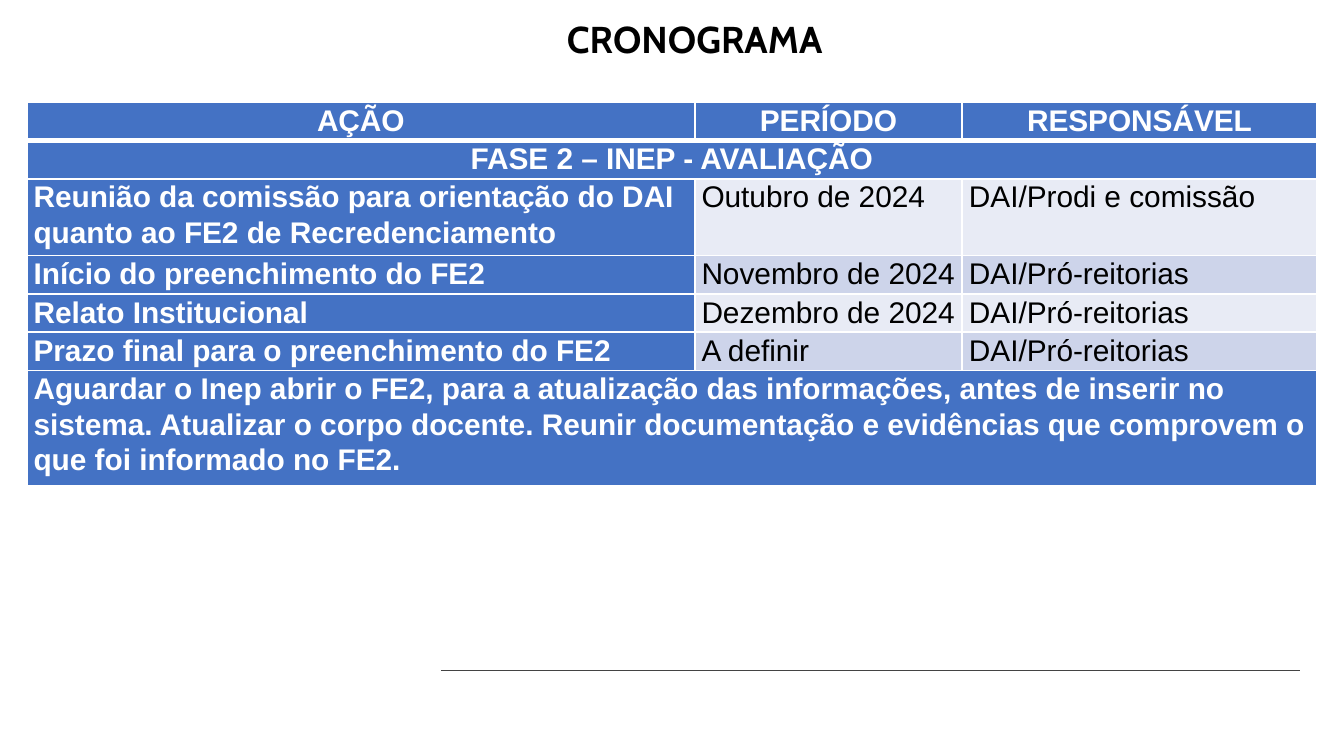
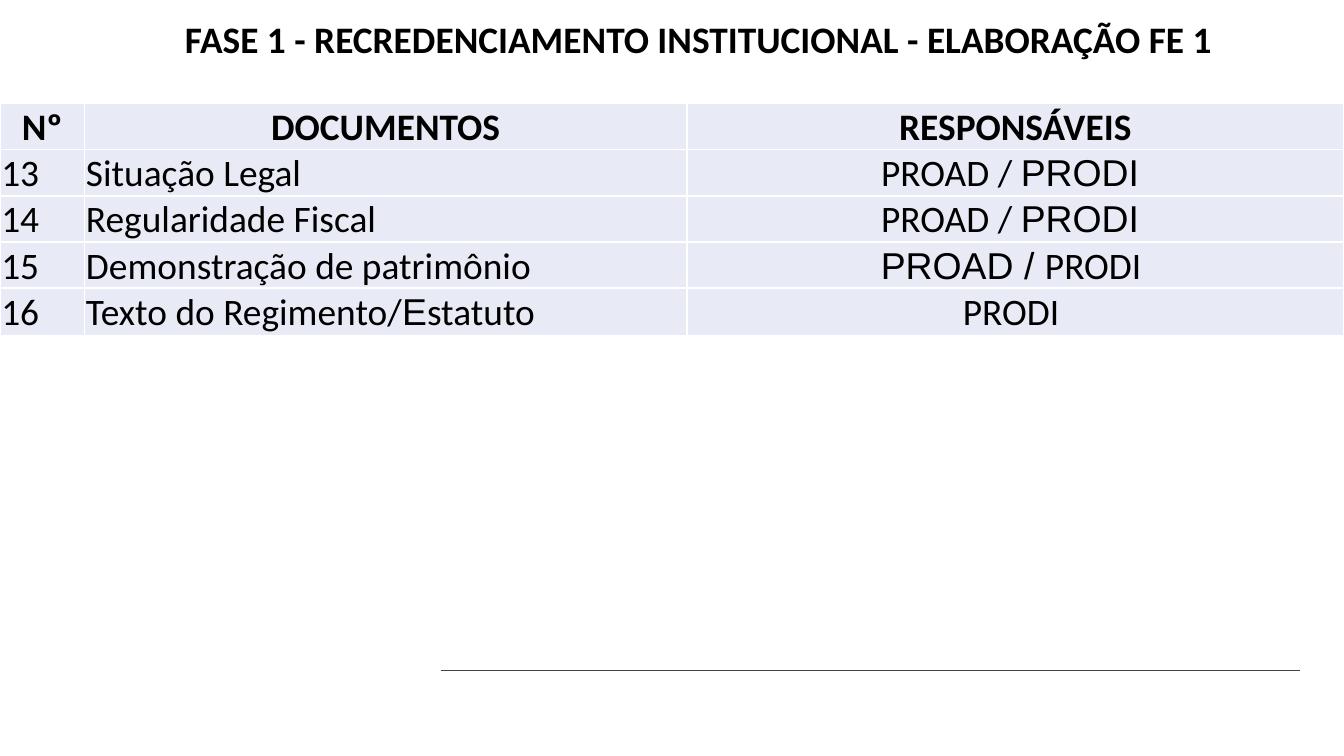
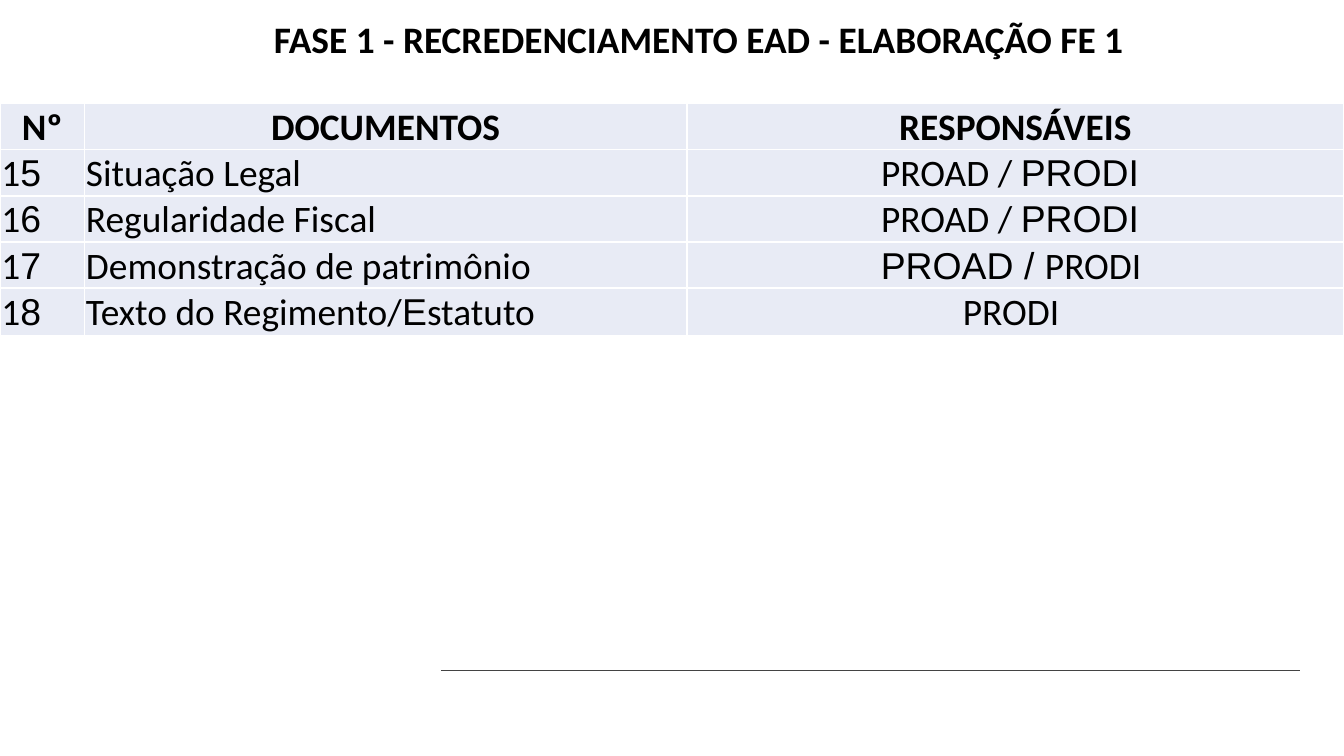
"""Build three slides with the schedule and document tables of an accreditation process."""
from dataclasses import dataclass

from lxml import etree
from pptx import Presentation
from pptx.dml.color import RGBColor
from pptx.enum.shapes import MSO_CONNECTOR
from pptx.enum.text import MSO_ANCHOR, PP_ALIGN
from pptx.oxml.ns import qn
from pptx.util import Inches, Pt

LEFT, CENTER, JUSTIFY = PP_ALIGN.LEFT, PP_ALIGN.CENTER, PP_ALIGN.JUSTIFY
TOP, MIDDLE = MSO_ANCHOR.TOP, MSO_ANCHOR.MIDDLE
STRAIGHT = MSO_CONNECTOR.STRAIGHT


@dataclass(frozen=True)
class Theme:
    black: str = "000000"
    white: str = "FFFFFF"
    rule: str = "434343"
    blue: str = "4472C4"
    bands: tuple = ("E8EBF5", "CDD4EA")
    title_size: int = 20
    schedule_size: int = 16
    document_size: int = 20
    title_font: str = "Cabin"
    sans: str = "Arial"
    body: str = "Calibri"


THEME = Theme()
WIDTH = 10
HEIGHT = WIDTH * 9 / 16
FRAME = 3.28

SCHEDULE = [
    ("AÇÃO", "PERÍODO", "RESPONSÁVEL"),
    ("FASE 2 – INEP - AVALIAÇÃO",),
    ("Reunião da comissão para orientação do DAI quanto ao FE2 de Recredenciamento",
     "Outubro de 2024", "DAI/Prodi e comissão"),
    ("Início do preenchimento do FE2", "Novembro de 2024", "DAI/Pró-reitorias"),
    ("Relato Institucional", "Dezembro de 2024", "DAI/Pró-reitorias"),
    ("Prazo final para o preenchimento do FE2", "A definir", "DAI/Pró-reitorias"),
    ("Aguardar o Inep abrir o FE2, para a atualização das informações, antes de inserir "
     "no sistema. Atualizar o corpo docente. Reunir documentação e evidências que "
     "comprovem o que foi informado no FE2.",),
]
SCHEDULE_GRID = dict(at=(0.2, 0.76), cols=(4.97, 1.99, 2.64), rows=(0.16,) * 6 + (0.32,),
                     margins=(0.05, 0, 0.05, 0), anchor=TOP)

SWITCH = "|"
DOCUMENT_HEAD = ("Nº", "DOCUMENTOS", "RESPONSÁVEIS")
DOCUMENTS = [
    ("Situação Legal", "PROAD / |PRODI "),
    ("Regularidade Fiscal", "PROAD / |PRODI "),
    ("Demonstração de patrimônio", "|PROAD / |PRODI "),
    ("Texto do Regimento/|E|statuto", "PRODI "),
]
DOCUMENT_SLIDES = [
    ("FASE 1 - RECREDENCIAMENTO INSTITUCIONAL - ELABORAÇÃO FE 1", ("13", "14", "15", "16")),
    ("FASE 1 - RECREDENCIAMENTO EAD - ELABORAÇÃO FE 1", ("1|5", "1|6", "1|7", "1|8")),
]
DOCUMENT_GRID = dict(at=(0, 0.77), cols=(0.63, 4.48, 4.89), rows=(0.31, 0.31, 0.31, 0.34, 0.35),
                     margins=(0.01, 0.01, 0.01, 0), anchor=MIDDLE)


def rgb(color):
    return RGBColor.from_string(color)


def write(p, text, font, size, color, bold, align):
    p.alignment = align
    f = p.font
    f.name, f.size, f.bold = font, Pt(size), bold
    f.color.rgb = rgb(color)
    for i, part in enumerate(text.split(SWITCH)):
        if part:
            r = p.add_run()
            r.text = part
            if i % 2:
                r.font.name = THEME.sans


def set_margins(box, margins):
    box.margin_left, box.margin_top, box.margin_right, box.margin_bottom = map(Inches, margins)


def add_base(prs, title, font):
    s = prs.slides.add_slide(prs.slide_layouts[6])
    y = Inches(4.99)
    line = s.shapes.add_connector(STRAIGHT, Inches(3.28), y, Inches(9.67), y)
    line.line.color.rgb = rgb(THEME.rule)
    line.line.width = Pt(0.75)
    etree.SubElement(line._element.spPr, qn("a:effectLst"))
    tf = s.shapes.add_textbox(*map(Inches, (0.54, 0.02, 9.32, 0.62))).text_frame
    tf.word_wrap = True
    tf.vertical_anchor = TOP
    set_margins(tf, (0.1,) * 4)
    p = tf.paragraphs[0]
    p.space_before = Pt(1.1)
    write(p, title, font, THEME.title_size, THEME.black, True, CENTER)
    return s


def set_borders(cell, top=1, bottom=1):
    tcPr = cell._tc.get_or_add_tcPr()
    for side, width in (("L", 1), ("R", 1), ("T", top), ("B", bottom)):
        ln = etree.SubElement(tcPr, qn(f"a:ln{side}"), w=str(Pt(width)))
        fill = etree.SubElement(ln, qn("a:solidFill"))
        etree.SubElement(fill, qn("a:srgbClr"), val=THEME.white)


def add_grid(s, at, cols, rows, margins, anchor, head_rule=1):
    frame = s.shapes.add_table(len(rows), len(cols), *map(Inches, at + (FRAME, FRAME)))
    table = frame.table
    table.first_row = table.horz_banding = False
    for col, width in zip(table.columns, cols):
        col.width = Inches(width)
    for i, (row, height) in enumerate(zip(table.rows, rows)):
        row.height = Inches(height)
        for cell in row.cells:
            set_margins(cell, margins)
            cell.vertical_anchor = anchor
            set_borders(cell, top=head_rule if i == 1 else 1, bottom=head_rule if i == 0 else 1)
    frame.width = frame.height = Inches(FRAME)
    return table


def paint(cell, color):
    cell.fill.solid()
    cell.fill.fore_color.rgb = rgb(color)


def add_schedule(prs):
    s = add_base(prs, "CRONOGRAMA ", THEME.title_font)
    table = add_grid(s, **SCHEDULE_GRID, head_rule=3)
    last = len(table.columns) - 1
    for i, texts in enumerate(SCHEDULE):
        if len(texts) == 1:
            table.cell(i, 0).merge(table.cell(i, last))
        for j, text in enumerate(texts):
            cell = table.cell(i, j)
            strong = i == 0 or j == 0
            paint(cell, THEME.blue if strong else THEME.bands[i % 2])
            p = cell.text_frame.paragraphs[0]
            p.line_spacing = 1.07
            write(p, text, THEME.sans, THEME.schedule_size,
                  THEME.white if strong else THEME.black, strong, CENTER if i < 2 else LEFT)


def add_documents(prs, title, numbers):
    s = add_base(prs, title, THEME.body)
    table = add_grid(s, **DOCUMENT_GRID)
    rows = [DOCUMENT_HEAD] + [(n, *doc) for n, doc in zip(numbers, DOCUMENTS)]
    for i, texts in enumerate(rows):
        for j, text in enumerate(texts):
            cell = table.cell(i, j)
            paint(cell, THEME.bands[0])
            write(cell.text_frame.paragraphs[0], text, THEME.body, THEME.document_size,
                  THEME.black, i == 0, CENTER if i == 0 or j == 2 else JUSTIFY)


def main():
    prs = Presentation()
    prs.slide_width, prs.slide_height = Inches(WIDTH), Inches(HEIGHT)
    add_schedule(prs)
    for title, numbers in DOCUMENT_SLIDES:
        add_documents(prs, title, numbers)
    prs.save("out.pptx")


if __name__ == "__main__":
    main()
